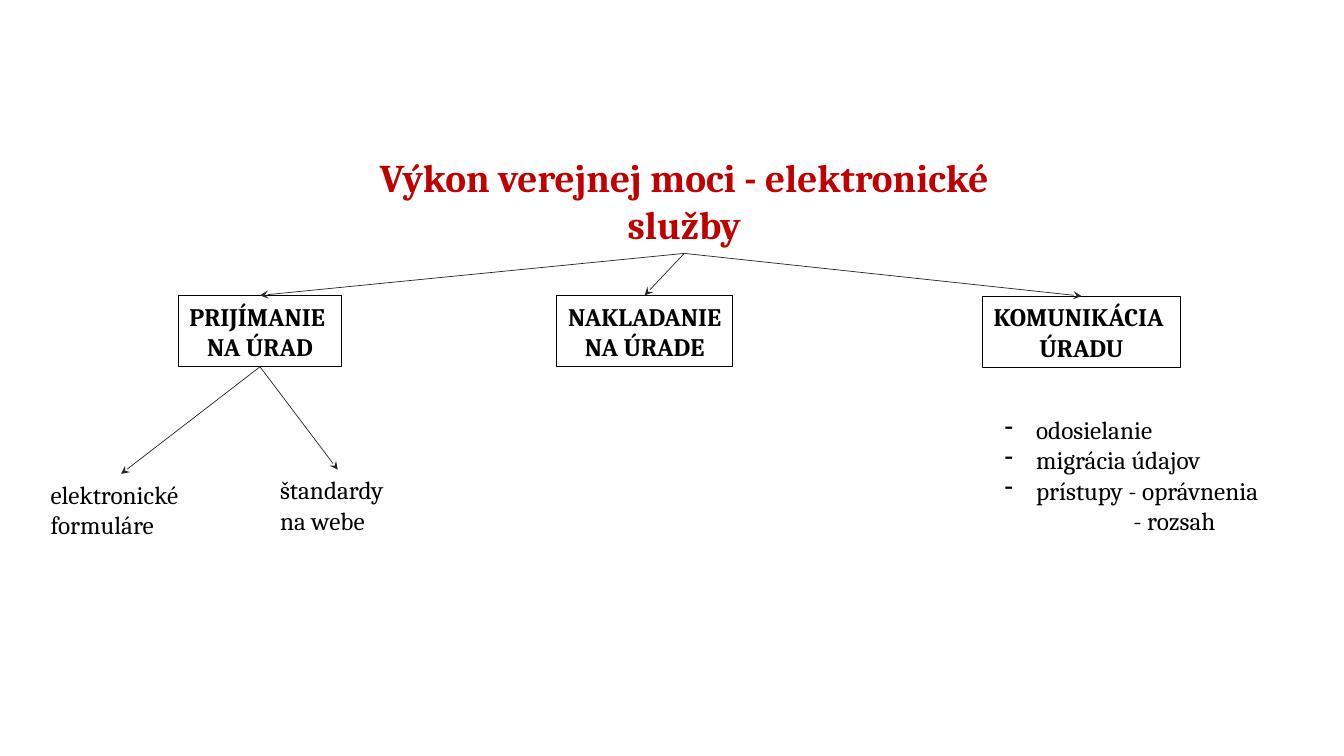
from pptx import Presentation
from pptx import util as u
from pptx.dml.color import RGBColor
from pptx.enum import shapes, text
from pptx.oxml.ns import qn
from lxml import etree

Pt = u.Pt
theme = {
    "face": "Cambria",
    "red": RGBColor(0xC0, 0, 0),
    "black": RGBColor(0, 0, 0),
    "arrow": RGBColor(0x26, 0x26, 0x26),
    "head": 28,
    "body": 18,
}
center = text.PP_ALIGN.CENTER
left = text.PP_ALIGN.LEFT

deck = Presentation()
deck.slide_width, deck.slide_height = Pt(960), Pt(540)
slide = deck.slides.add_slide(deck.slide_layouts[6])


def write(box, lines, size="body", color="black", bold=False, align=left, wrap=True):
    frame = box.text_frame
    frame.word_wrap = wrap
    for i, line in enumerate(lines):
        para = frame.paragraphs[0] if i == 0 else frame.add_paragraph()
        para.alignment = align
        run = para.add_run()
        run.text = line
        look = {"name": theme["face"], "size": Pt(theme[size]), "bold": bold}
        for key, value in look.items():
            setattr(run.font, key, value)
        run.font.color.rgb = theme[color]
    return box


def place(spot):
    return slide.shapes.add_textbox(*map(Pt, spot))


title = write(place((259, 106, 459.5, 75)),
              ["Výkon verejnej moci - elektronické služby"],
              "head", "red", True, center)

labels = []
for spot, lines in [
    ((127.5, 211, 116.5, 51), ["PRIJÍMANIE ", "NA ÚRAD"]),
    ((397.5, 211, 126, 51), ["NAKLADANIE", "NA ÚRADE"]),
    ((701.5, 211.5, 142, 51), ["KOMUNIKÁCIA ", "ÚRADU"]),
]:
    box = slide.shapes.add_shape(shapes.MSO_SHAPE.RECTANGLE, *map(Pt, spot))
    box.shadow.inherit = False
    box.fill.background()
    box.line.color.rgb = theme["black"]
    box.line.width = Pt(0.75)
    labels.append(write(box, lines, bold=True, align=center, wrap=False))

leaves = [
    write(place(spot), lines)
    for spot, lines in [
        ((29, 338.5, 115, 51), ["elektronické", "formuláre"]),
        ((193, 335.5, 96.5, 51), ["štandardy", "na webe"]),
    ]
]

tasks = write(place((710.5, 292.5, 209, 94.5)),
              ["odosielanie", "migrácia údajov", "prístupy - oprávnenia", "- rozsah"])
*items, last = tasks.text_frame.paragraphs
for para in items:
    props = para._p.get_or_add_pPr()
    props.set("marL", str(Pt(22.5)))
    props.set("indent", str(Pt(-22.5)))
    etree.SubElement(props, qn("a:buChar")).set("char", "-")
last._p.get_or_add_pPr().set("marL", str(Pt(92)))

links = [(title, box) for box in labels] + [(labels[0], box) for box in leaves]
for start, end in links:
    arrow = slide.shapes.add_connector(shapes.MSO_CONNECTOR.STRAIGHT, 0, 0, 0, 0)
    arrow.begin_connect(start, 2)
    arrow.end_connect(end, 0)
    arrow.line.color.rgb = theme["arrow"]
    arrow.line.width = Pt(0.5)
    etree.SubElement(arrow.line._get_or_add_ln(), qn("a:tailEnd")).set("type", "stealth")
    etree.SubElement(arrow._element.spPr, qn("a:effectLst"))

deck.save("out.pptx")
